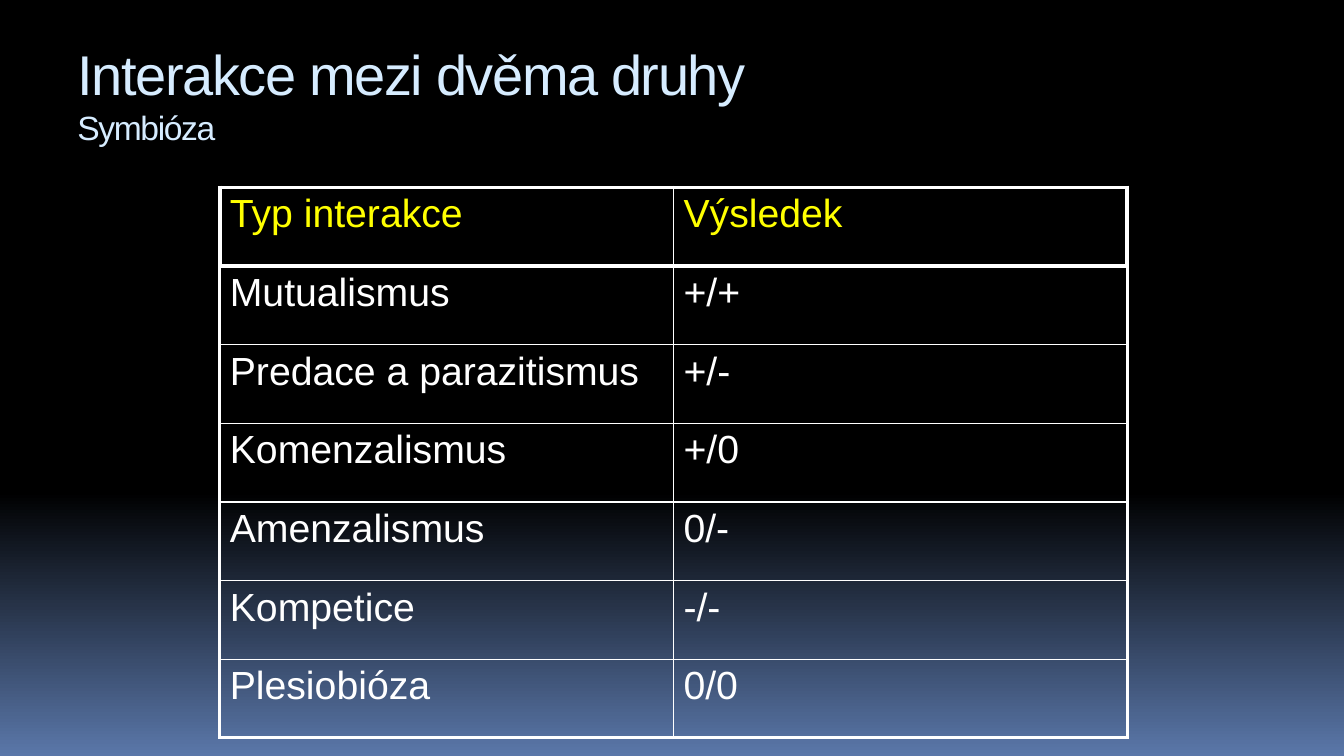
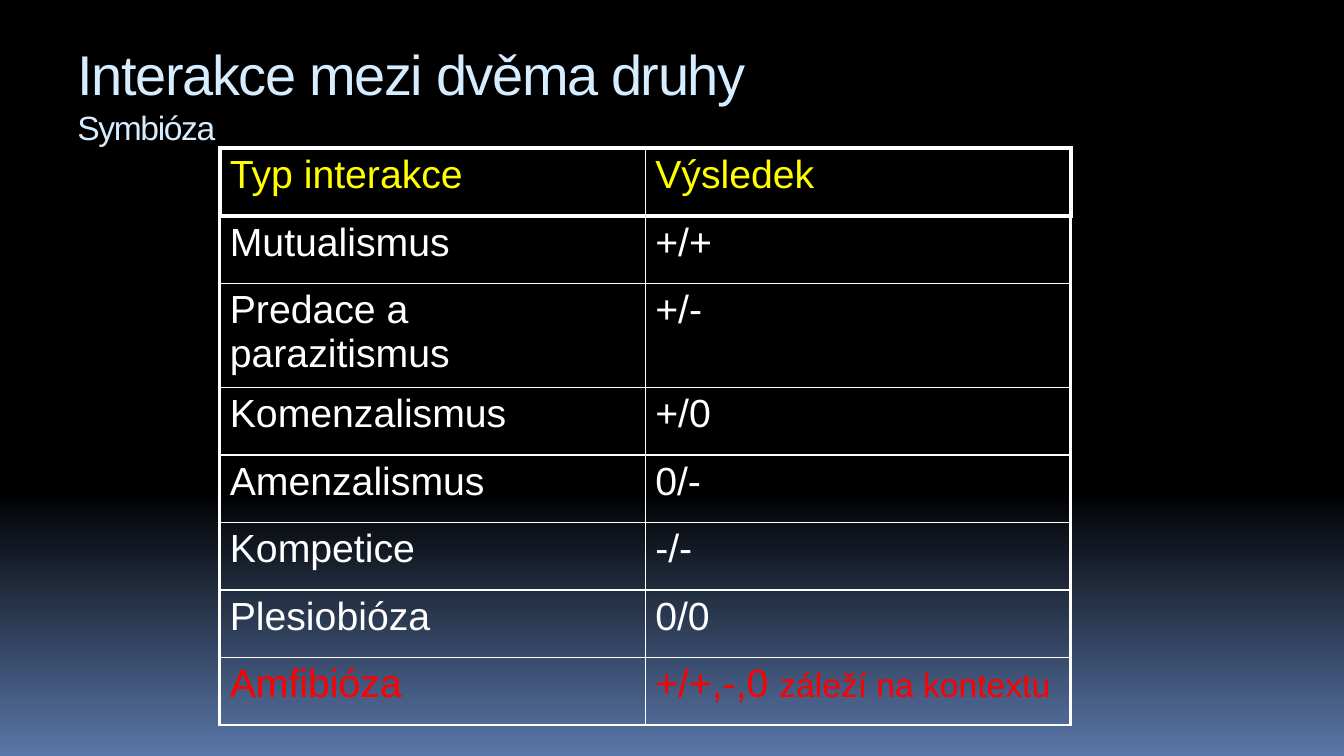
import copy

import lxml.etree
import pptx
import pptx.dml.color
import pptx.enum.text
import pptx.oxml.ns
import pptx.util

Inches = pptx.util.Inches
Pt = pptx.util.Pt
RGBColor = pptx.dml.color.RGBColor
qn = pptx.oxml.ns.qn

BLACK = RGBColor(0x00, 0x00, 0x00)
BLUE = RGBColor(0x5A, 0x77, 0xA9)
PALE = RGBColor(0xD6, 0xEC, 0xFF)
YELLOW = RGBColor(0xFF, 0xFF, 0x00)
WHITE = RGBColor(0xFF, 0xFF, 0xFF)
RED = RGBColor(0xFF, 0x00, 0x00)

FONT = "Arial"
THIN, FRAME, THICK = 1, 2.25, 3

HEAD = ("Typ interakce", "Výsledek")
PAIRS = [
    ("Mutualismus", "+/+"),
    ("Predace a parazitismus", "+/-"),
    ("Komenzalismus", "+/0"),
    ("Amenzalismus", "0/-"),
    ("Kompetice", "-/-"),
    ("Plesiobióza", "0/0"),
]
MIXED = ("Amfibióza", "+/+,-,0 ")


def write(para, text, size=28, color=WHITE, track=0):
    """Add a run; track is the letter spacing in points."""
    run = para.add_run()
    run.text = text
    run.font.name = FONT
    run.font.size = Pt(size)
    run.font.color.rgb = color
    if track:
        run.font._element.set("spc", str(track * 100))


def backdrop(master):
    """Black down to 65 %, then a fade to blue, for every slide."""
    fill = master.background.fill
    fill.gradient()
    fill.gradient_angle = 270
    first = fill.gradient_stops[0]._gs
    first.addnext(copy.deepcopy(first))
    marks = ((0, BLACK), (0.65, BLACK), (1, BLUE))
    for stop, (place, color) in zip(fill.gradient_stops, marks):
        stop.position = place
        stop.color.rgb = color


def title(slide, main_text, sub_text):
    box = slide.shapes.add_textbox(Inches(0.67), Inches(0.3), Inches(12), Inches(1.25))
    frame = box.text_frame
    frame.word_wrap = True
    frame.vertical_anchor = pptx.enum.text.MSO_ANCHOR.MIDDLE
    para = frame.paragraphs[0]
    write(para, main_text, size=40, color=PALE, track=-1)
    para.add_line_break()
    write(para, sub_text, size=24, color=PALE, track=-1)


def edge(cell, **widths):
    """Draw white borders, keyed L, R, T, B in schema order."""
    props = cell._tc.get_or_add_tcPr()
    for place, (side, width) in enumerate(widths.items()):
        line = lxml.etree.Element(qn("a:ln" + side), w=str(Pt(width)))
        fill = lxml.etree.SubElement(line, qn("a:solidFill"))
        lxml.etree.SubElement(fill, qn("a:srgbClr"), val=str(WHITE))
        props.insert(place, line)


def grid(slide, top, width, heights, rows):
    """Add the table; rows are (texts, colour) and return its cells' table."""
    last = len(rows) - 1
    shape = slide.shapes.add_table(
        len(rows), 2, Inches(2.18), Inches(top), Inches(2 * width), Inches(sum(heights)))
    table = shape.table
    table.first_row = table.horz_banding = False
    for col in table.columns:
        col.width = Inches(width)
    for r, (texts, color) in enumerate(rows):
        table.rows[r].height = Inches(heights[r])
        side = FRAME if r else THICK
        above = THICK if r <= 1 else THIN
        below = THICK if r == 0 else FRAME if r == last else THIN
        for c, text in enumerate(texts):
            cell = table.cell(r, c)
            cell.fill.background()
            edge(cell, L=THIN if c else side, R=side if c else THIN, T=above, B=below)
            write(cell.text_frame.paragraphs[0], text, color=color)
    return table


def main():
    deck = pptx.Presentation()
    deck.slide_width, deck.slide_height = Inches(13.33), Inches(7.5)
    backdrop(deck.slide_master)

    first, second = (deck.slides.add_slide(deck.slide_layouts[6]) for _ in range(2))
    for slide in (first, second):
        title(slide, "Interakce mezi dvěma druhy", "Symbióza")

    rows = [(HEAD, YELLOW)] + [(pair, WHITE) for pair in PAIRS]
    grid(first, 1.86, 4.5, [0.78] * 7, rows)

    heights = [0.67] * 2 + [1.03] + [0.67] * 5
    table = grid(second, 1.47, 4.22, heights, rows + [(MIXED, RED)])
    note = table.cell(7, 1).text_frame.paragraphs[0]
    write(note, "záleží na kontextu", size=24, color=RED)

    deck.save("out.pptx")


if __name__ == "__main__":
    main()
